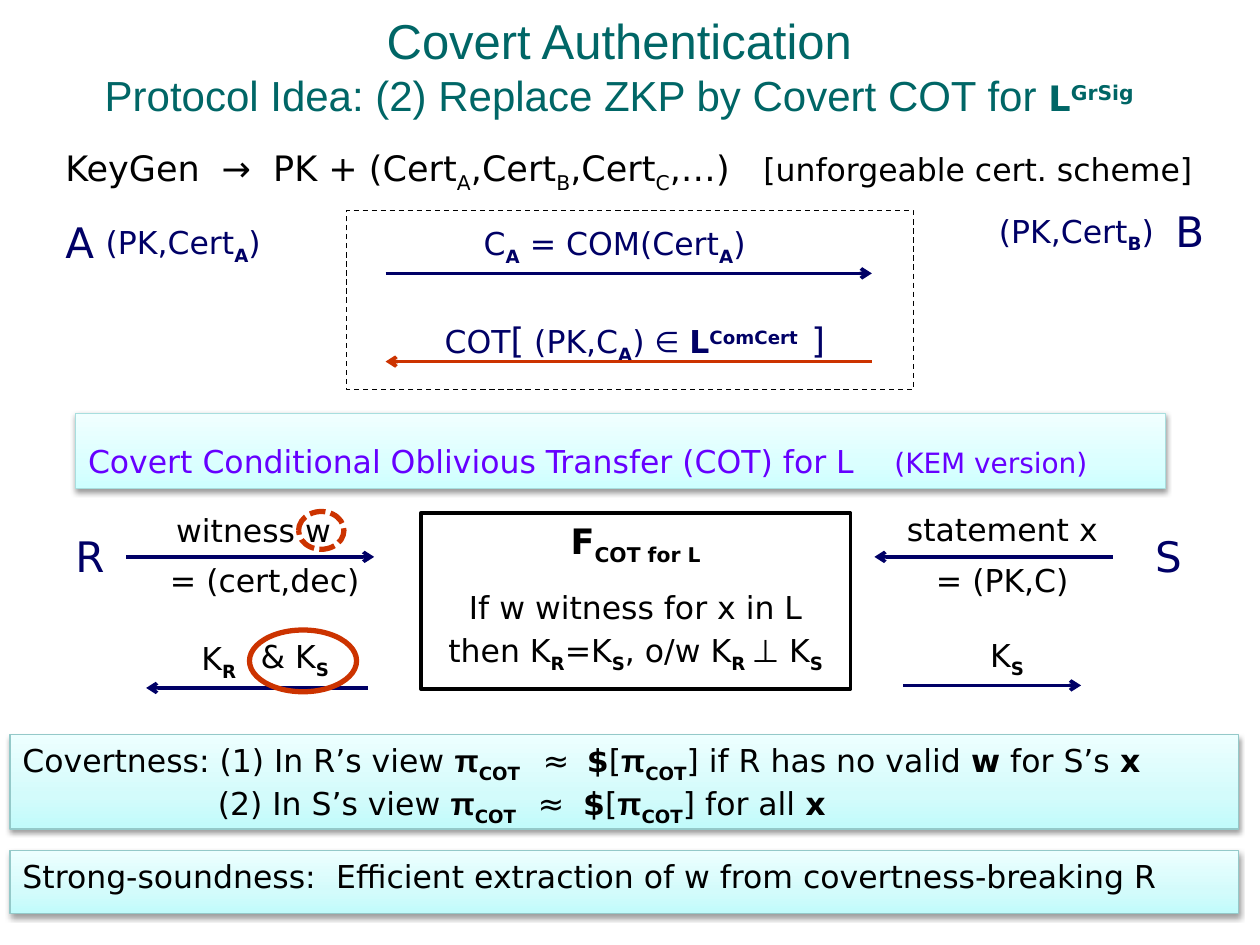
from copy import deepcopy
from lxml.etree import SubElement
from pptx import Presentation
from pptx.dml.color import RGBColor
from pptx.enum.dml import MSO_LINE
from pptx.enum.shapes import MSO_CONNECTOR, MSO_SHAPE
from pptx.enum.text import MSO_ANCHOR, MSO_AUTO_SIZE, PP_ALIGN
from pptx.oxml.ns import qn
from pptx.util import Inches, Pt

THEME = {
    "sans": "Arial", "body": "DejaVu Sans",
    "teal": "006666", "navy": "000066", "black": "000000",
    "red": "CC3300", "violet": "6600FF", "white": "FFFFFF",
    "heading": 28, "subheading": 24, "party": 24, "large": 20, "text": 18, "small": 16,
}
CYAN = {"stops": ("C1FBFB", "D3FBFB", "EDFFFF"), "edge": "94C9C9"}
PALE = {"stops": ("CDFFFF", "DBFFFF", "F1FFFF"), "edge": "A8DEDE"}

BOLD = {"bold": True}
SUB = {"bold": True, "base": -25}
SUP = {"bold": True, "base": 30}
LIGHT_SUB = {"base": -25}
LARGE = {"size": "large"}
PI = [("π", {"bold": True, "font": "sans"}), ("COT", SUB)]
LOOKS_RANDOM = [*PI, "\t≈\t", ("$", BOLD), "[", *PI]

TITLE = [
    [("Covert Authentication", {"size": "heading"})],
    ["Protocol Idea: (2) Replace ZKP by Covert COT for ",
     ("L", {"bold": True, "font": "body", "size": "large"}),
     ("GrSig", {**SUP, "font": "body", "size": "large"})],
]
KEYGEN = ["KeyGen\t→\tPK + (Cert", ("A", LIGHT_SUB), ",Cert", ("B", LIGHT_SUB),
          ",Cert", ("C", LIGHT_SUB), ",…)\t", ("[unforgeable cert. scheme]", {"size": "text"})]
KEYGEN_TABS = (1.24, 1.65, 5.54)

PARTIES = [("A", 0.42, 1.67), ("B", 9.23, 1.58), ("R", 0.5, 4.16), ("S", 9.07, 4.16)]
LABELS = [
    (3.74, 1.73, 2.38, "navy", ["C", ("A", SUB), " = COM(Cert", ("A", SUB), ")"]),
    (7.83, 1.63, 1.51, "navy", ["(PK,Cert", ("B", SUB), ")"]),
    (0.74, 1.72, 1.51, "navy", ["(PK,Cert", ("A", SUB), ")"]),
    (3.43, 2.37, 3.47, "navy", [
        "COT", ("[", LARGE), " (PK,C", ("A", SUB), ") ", ("∈", {"size": "heading", "base": 2}),
        " ", ("L", BOLD), ("ComCert", SUP), (" ", {"size": "party"}), ("]", LARGE)]),
    (1.3, 4.01, 1.45, "black", ["witness w"]),
    (1.25, 4.4, 1.75, "black", ["= (cert,dec)"]),
    (7.1, 4, 1.73, "black", ["statement x"]),
    (7.33, 4.4, 1.32, "black", ["= (PK,C)"]),
    (1.5, 5.02, 0.51, "black", ["K", ("R", SUB)]),
    (1.97, 5.01, 0.89, "black", ["& K", ("S", SUB)]),
    (7.76, 5, 0.49, "black", ["K", ("S", SUB)]),
]
ARROWS = [
    (3.06, 6.92, 2.17, "navy"), (6.92, 3.06, 2.87, "red"),
    (1, 2.97, 4.42, "navy"), (8.83, 6.94, 4.42, "navy"),
    (2.92, 1.16, 5.46, "navy"), (7.17, 8.58, 5.44, "navy"),
]
FUNCTIONALITY = [
    ([("F", {"bold": True, "size": "large"}), ("COT for L", {**SUB, "size": "large"})], 12),
    (["If w witness for x in L"], 3),
    (["then K", ("R", SUB), "=K", ("S", SUB), ", o/w K", ("R ", SUB), "⊥ K", ("S", SUB)], 3),
]
BARS = [
    ((0.6, 3.28, 8.65, 0.6), PALE, "violet", 0.08, 1.5, [
        (["Covert Conditional Oblivious Transfer (COT) for L\t",
          ("(KEM version)", {"size": "small"})], (6.4,))]),
    ((0.08, 5.83, 9.75, 0.75), CYAN, "black", 0.05, 1, [
        (["Covertness: (1) In R’s view ", *LOOKS_RANDOM, "] if R has no valid ",
          ("w", BOLD), " for S’s ", ("x", BOLD)], (4.13, 4.48)),
        (["\t(2) In S’s view ", *LOOKS_RANDOM, "] for all ", ("x", BOLD)], (1.55, 4.09, 4.45))]),
    ((0.08, 6.75, 9.75, 0.5), CYAN, "black", 0.05, 1, [
        (["Strong-soundness:\tEfficient extraction of w from covertness-breaking R"], (2.49,))]),
]
OUTLINES = [
    (MSO_SHAPE.RECTANGLE, (2.75, 1.67, 4.5, 1.42), "black", 0.75, MSO_LINE.DASH),
    (MSO_SHAPE.OVAL, (1.98, 5, 0.85, 0.49), "red", 3, None),
    (MSO_SHAPE.OVAL, (2.37, 4.06, 0.36, 0.3), "red", 3, MSO_LINE.SQUARE_DOT),
]


def rgb(name):
    return RGBColor.from_string(THEME.get(name, name))


def add_runs(para, runs, color, size="text", font="body"):
    for item in runs:
        text, style = (item, {}) if isinstance(item, str) else item
        span = para.add_run()
        span.text = text
        span.font.name = THEME[style.get("font", font)]
        span.font.size = Pt(THEME[style.get("size", size)])
        span.font.bold = style.get("bold", False)
        span.font.color.rgb = rgb(color)
        if "base" in style:
            span.font._element.set("baseline", str(style["base"] * 1000))


def add_tabs(para, stops):
    tabs = SubElement(para._p.get_or_add_pPr(), qn("a:tabLst"))
    for stop in stops:
        SubElement(tabs, qn("a:tab"), pos=str(Inches(stop)), algn="l")


def add_text(page, area, wrap=True):
    box = page.shapes.add_textbox(*map(Inches, area))
    box.text_frame.word_wrap = wrap
    return box.text_frame


def add_label(page, area, runs, color, size="text"):
    frame = add_text(page, area, wrap=False)
    frame.auto_size = MSO_AUTO_SIZE.SHAPE_TO_FIT_TEXT
    add_runs(frame.paragraphs[0], runs, color, size)


def add_outline(page, kind, area, color, width, dash=None):
    shape = page.shapes.add_shape(kind, *map(Inches, area))
    shape.shadow.inherit = False
    shape.fill.background()
    shape.line.color.rgb = rgb(color)
    shape.line.width = Pt(width)
    if dash:
        shape.line.dash_style = dash
    shape.text_frame.word_wrap = True
    shape.text_frame.vertical_anchor = MSO_ANCHOR.TOP
    return shape


def add_paragraphs(frame, count):
    return [frame.paragraphs[0], *(frame.add_paragraph() for _ in range(count - 1))]


def add_bar(page, area, look, color, inset, spacing, lines):
    bar = add_outline(page, MSO_SHAPE.RECTANGLE, area, look["edge"], 0.75)
    bar.fill.gradient()
    bar.fill.gradient_angle = 90
    stops = bar._element.spPr.find(qn("a:gradFill")).find(qn("a:gsLst"))
    stops.append(deepcopy(stops[-1]))
    for stop, position, tint in zip(bar.fill.gradient_stops, (0, 0.35, 1), look["stops"]):
        stop.position = position
        stop.color.rgb = rgb(tint)
    effects = bar._element.spPr.find(qn("a:effectLst"))
    shadow = SubElement(effects, qn("a:outerShdw"), blurRad=str(Pt(3.1)),
                        dist=str(Pt(1.6)), dir="5400000", rotWithShape="0")
    shade = SubElement(shadow, qn("a:srgbClr"), val=THEME["black"])
    SubElement(shade, qn("a:alpha"), val="38000")
    frame = bar.text_frame
    frame.margin_top = Inches(inset)
    for para, (runs, tabs) in zip(add_paragraphs(frame, len(lines)), lines):
        para.alignment = PP_ALIGN.LEFT
        para.line_spacing = spacing
        add_tabs(para, tabs)
        add_runs(para, runs, color)


def add_arrow(page, start, end, y, color):
    arrow = page.shapes.add_connector(MSO_CONNECTOR.STRAIGHT, *map(Inches, (start, y, end, y)))
    arrow.line.color.rgb = rgb(color)
    arrow.line.width = Pt(2)
    SubElement(arrow.line._get_or_add_ln(), qn("a:tailEnd"), type="arrow")
    SubElement(arrow._element.spPr, qn("a:effectLst"))


def main():
    deck = Presentation()
    deck.slide_width, deck.slide_height = Inches(10), Inches(7.5)
    page = deck.slides.add_slide(deck.slide_layouts[6])

    title = add_text(page, (0.5, 0.17, 8.83, 0.83))
    title.vertical_anchor = MSO_ANCHOR.BOTTOM
    para = title.paragraphs[0]
    para.alignment = PP_ALIGN.CENTER
    add_runs(para, TITLE[0], "teal", font="sans")
    para.add_line_break()
    add_runs(para, TITLE[1], "teal", "subheading", "sans")

    para = add_text(page, (0.42, 1.04, 9.42, 0.63)).paragraphs[0]
    para.line_spacing = 1.2
    add_tabs(para, KEYGEN_TABS)
    add_runs(para, KEYGEN, "black", "large")

    for bar in BARS:
        add_bar(page, *bar)

    box = add_outline(page, MSO_SHAPE.RECTANGLE, (3.34, 4.07, 3.41, 1.4), "black", 2)
    box.fill.solid()
    box.fill.fore_color.rgb = rgb("white")
    paragraphs = add_paragraphs(box.text_frame, len(FUNCTIONALITY))
    for para, (runs, after) in zip(paragraphs, FUNCTIONALITY):
        para.alignment = PP_ALIGN.CENTER
        para.space_after = Pt(after)
        add_runs(para, runs, "black")

    for name, left, top in PARTIES:
        add_label(page, (left, top, 0.43, 0.51), [name], "navy", "party")
    for left, top, width, color, runs in LABELS:
        add_label(page, (left, top, width, 0.4), runs, color)
    for arrow in ARROWS:
        add_arrow(page, *arrow)
    for outline in OUTLINES:
        add_outline(page, *outline)
    deck.save("out.pptx")


if __name__ == "__main__":
    main()
